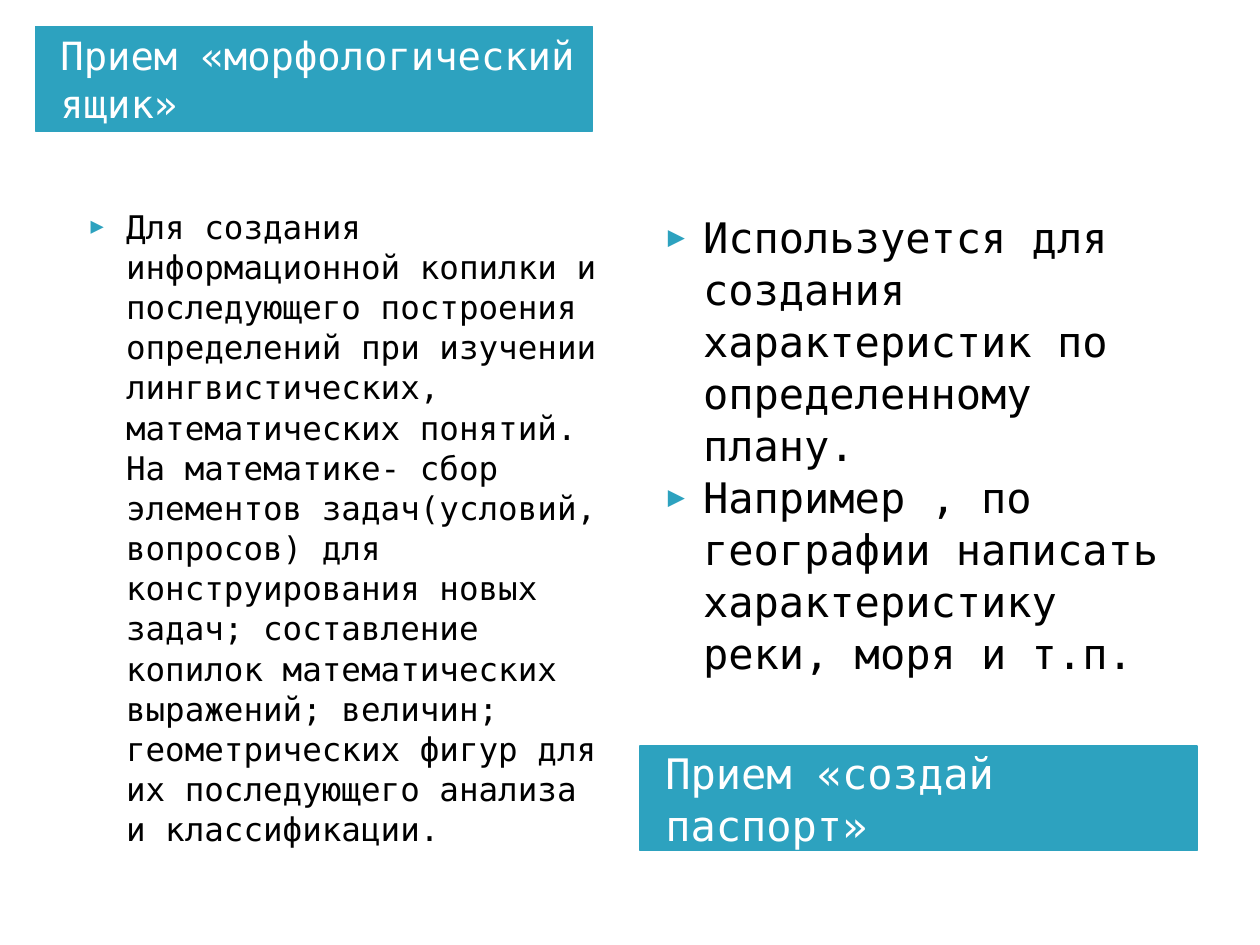
import pptx
import pptx.dml.color
import pptx.enum.text
import pptx.oxml
import pptx.oxml.ns
import pptx.util
from dataclasses import dataclass

ANCHOR = pptx.enum.text.MSO_ANCHOR
FIT = pptx.enum.text.MSO_AUTO_SIZE


@dataclass(frozen=True)
class Theme:
    accent: str = "2DA2BF"
    light: str = "FFFFFF"
    dark: str = "000000"
    font: str = "DejaVu Sans Mono"
    large: float = 24
    head: float = 22.2
    small: float = 18.6
    leading: float = 1.03


THEME = Theme()
WIDE, HIGH = pptx.util.Inches(10), pptx.util.Inches(7.5)

# Boxes in percent of the slide: left, top, width, height
HEADS = {
    1: ((2.8, 2.8, 44.2, 11.07), THEME.head, "Прием «морфологический ящик»"),
    3: ((50.8, 78.93, 44.2, 11.07), THEME.large, "Прием «создай паспорт»"),
}
LISTS = {
    2: ((5, 21.07, 44.2, 57.47), THEME.small, [
        "Для создания информационной копилки и последующего построения "
        "определений при изучении лингвистических, математических понятий. "
        "На математике- сбор элементов задач(условий, вопросов) для "
        "конструирования новых задач; составление копилок математических "
        "выражений; величин; геометрических фигур для их последующего "
        "анализа и классификации."]),
    4: ((50.8, 21.6, 44.9, 56.93), THEME.large, [
        "Используется для создания характеристик по определенному плану.",
        "Например , по географии написать характеристику реки, моря и т.п."]),
}


def color(code):
    return pptx.dml.color.RGBColor.from_string(code)


def apply(item, **form):
    for name, value in form.items():
        setattr(item, name, value)


def place(shape, box):
    left, top, width, height = (part / 100 for part in box)
    apply(shape, left=round(left * WIDE), top=round(top * HIGH),
          width=round(width * WIDE), height=round(height * HIGH))


def bullet(para):
    props = para._p.get_or_add_pPr()
    props.set("marL", str(pptx.util.Inches(0.4)))
    props.set("indent", str(pptx.util.Inches(-0.28)))
    space = pptx.oxml.ns.nsdecls("a")
    for mark in (f'<a:buClr {space}><a:srgbClr val="{THEME.accent}"/></a:buClr>',
                 f'<a:buSzPct {space} val="68000"/>',
                 f'<a:buFont {space} typeface="{THEME.font}"/>',
                 f'<a:buChar {space} char="▶"/>'):
        props.append(pptx.oxml.parse_xml(mark))


def write(frame, lines, size, ink, marked=False):
    frame.text = "\n".join(lines)
    for para in frame.paragraphs:
        if marked:
            bullet(para)
        apply(para, space_before=pptx.util.Pt(0), line_spacing=THEME.leading)
        apply(para.font, name=THEME.font, size=pptx.util.Pt(size), bold=False)
        para.font.color.rgb = color(ink)


def header(shape, box, size, text):
    place(shape, box)
    shape.fill.solid()
    shape.fill.fore_color.rgb = color(THEME.accent)
    shape.line.color.rgb = color(THEME.accent)
    shape.line.width = pptx.util.Pt(0.75)
    apply(shape.text_frame, vertical_anchor=ANCHOR.MIDDLE, auto_size=FIT.NONE,
          word_wrap=True, margin_left=pptx.util.Inches(0.2))
    write(shape.text_frame, [text], size, THEME.light)


def points(shape, box, size, lines):
    place(shape, box)
    apply(shape.text_frame, vertical_anchor=ANCHOR.TOP, auto_size=FIT.NONE,
          word_wrap=True)
    write(shape.text_frame, lines, size, THEME.dark, marked=True)


def main():
    deck = pptx.Presentation()
    apply(deck, slide_width=WIDE, slide_height=HIGH)
    slide = deck.slides.add_slide(deck.slide_layouts.get_by_name("Comparison"))

    # The two coloured headings replace the slide title
    title = slide.shapes.title.element
    title.getparent().remove(title)

    holders = {item.placeholder_format.idx: item for item in slide.placeholders}
    for key, data in HEADS.items():
        header(holders[key], *data)
    for key, data in LISTS.items():
        points(holders[key], *data)

    deck.save("out.pptx")


if __name__ == "__main__":
    main()
